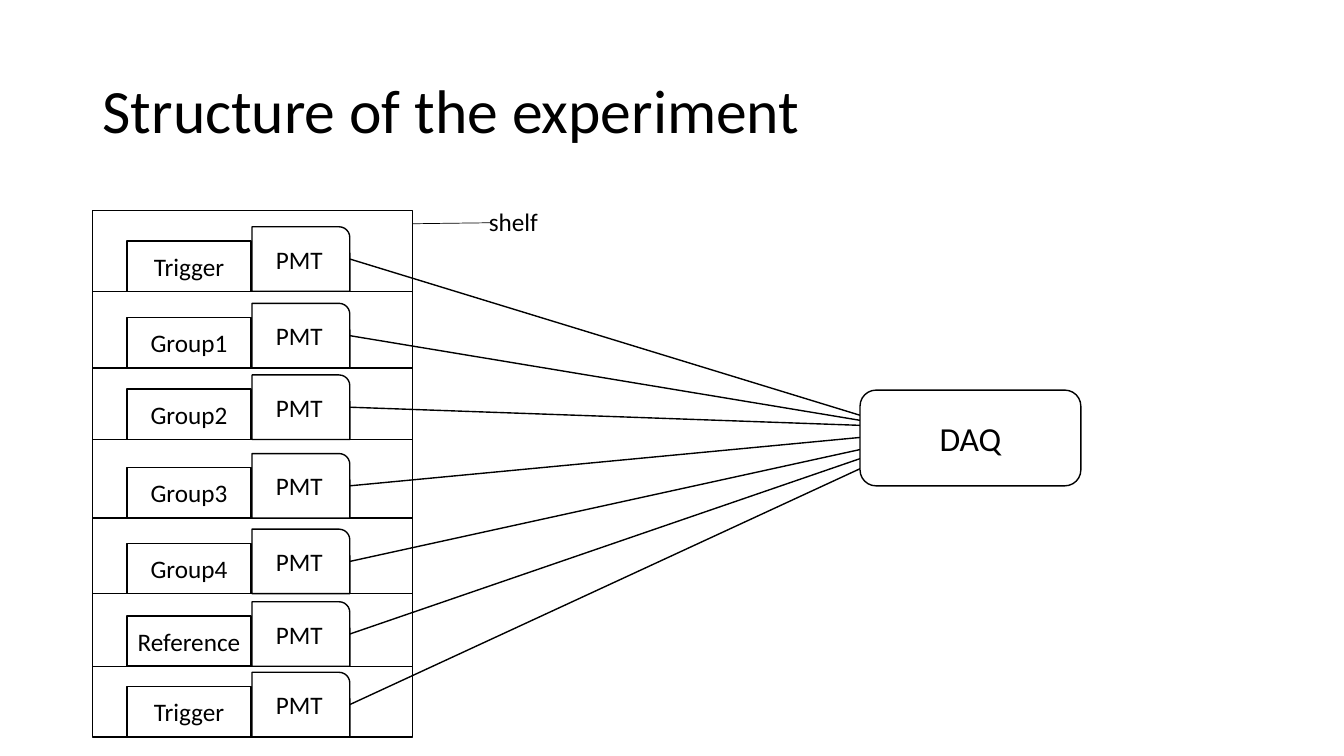
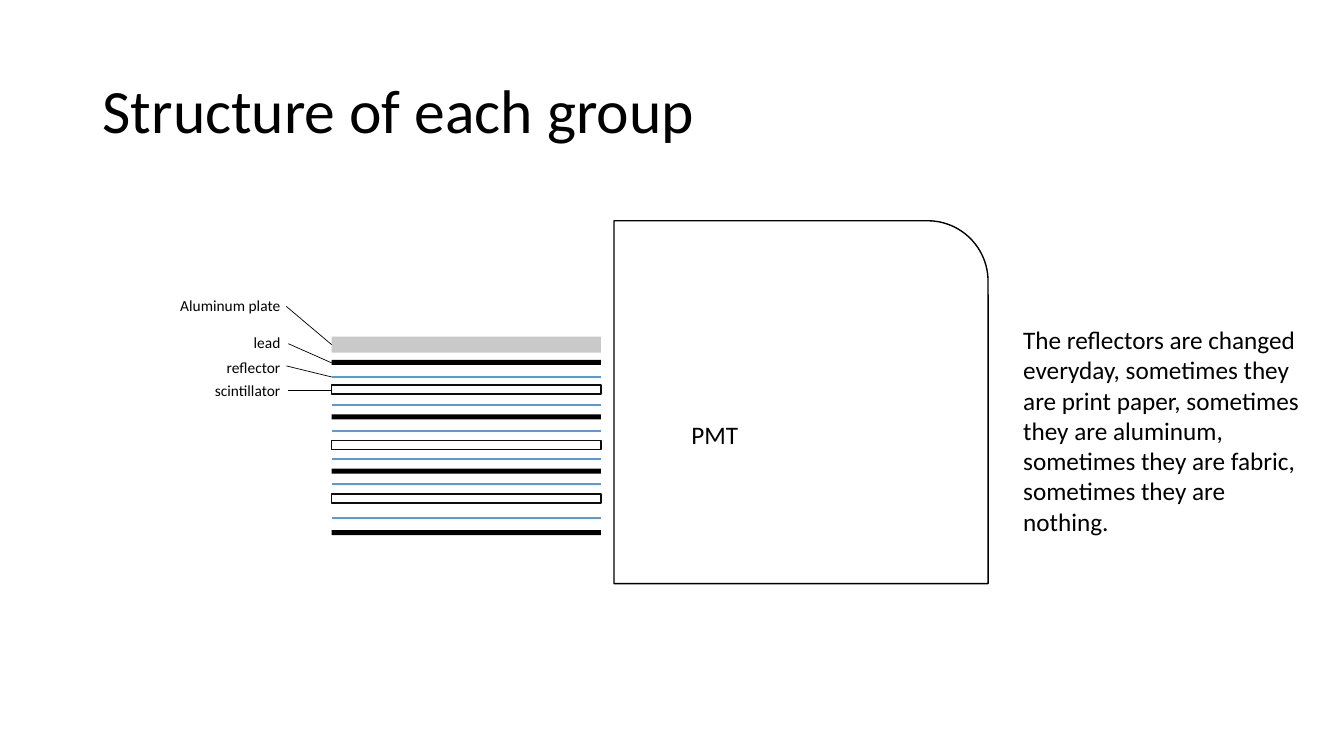
from lxml.etree import SubElement
from pptx import Presentation
from pptx.dml.color import RGBColor
from pptx.enum.shapes import MSO_CONNECTOR, MSO_SHAPE
from pptx.enum.text import MSO_ANCHOR, PP_ALIGN
from pptx.oxml.ns import qn
from pptx.util import Inches, Pt

COLORS = {
    "ink": "000000",
    "paper": "FFFFFF",
    "plate": "C9C9C9",
    "mirror": "5B9BD5",
    "edge": "0D0D0D",
}
FONT = "Calibri"


def tint(name):
    return RGBColor.from_string(COLORS[name])


class Deck:
    def __init__(self):
        self.prs = Presentation()
        self.prs.slide_width = Inches(13.33)
        self.prs.slide_height = Inches(7.5)
        self.slide = None

    def page(self, title):
        self.slide = self.prs.slides.add_slide(self.prs.slide_layouts[6])
        para = self.text(0.92, 0.4, 11.5, 1.45, title, 44, anchor=MSO_ANCHOR.MIDDLE)
        para.line_spacing = 0.9

    def label(self, frame, words, size, align):
        frame.word_wrap = True
        para = frame.paragraphs[0]
        para.text = words
        para.alignment = align
        para.font.name = FONT
        para.font.size = Pt(size)
        para.font.color.rgb = tint("ink")
        return para

    def text(self, x, y, w, h, words, size=18, align=PP_ALIGN.LEFT,
             anchor=MSO_ANCHOR.TOP):
        box = self.slide.shapes.add_textbox(Inches(x), Inches(y), Inches(w), Inches(h))
        box.text_frame.vertical_anchor = anchor
        return self.label(box.text_frame, words, size, align)

    def shape(self, x, y, w, h, words="", size=18, kind=MSO_SHAPE.RECTANGLE,
              fill="paper", edge="ink"):
        box = self.slide.shapes.add_shape(
            kind, Inches(x), Inches(y), Inches(w), Inches(h))
        box.shadow.inherit = False
        box.fill.solid()
        box.fill.fore_color.rgb = tint(fill)
        if edge:
            box.line.color.rgb = tint(edge)
            box.line.width = Pt(1)
        else:
            box.line.fill.background()
        if words:
            frame = box.text_frame
            frame.margin_left = frame.margin_right = Inches(0.05)
            frame.vertical_anchor = MSO_ANCHOR.MIDDLE
            self.label(frame, words, size, PP_ALIGN.CENTER)

    def line(self, x1, y1, x2, y2, width=1, color="ink"):
        link = self.slide.shapes.add_connector(
            MSO_CONNECTOR.STRAIGHT, Inches(x1), Inches(y1), Inches(x2), Inches(y2))
        link.line.color.rgb = tint(color)
        link.line.width = Pt(width)
        SubElement(link._element.spPr, qn("a:effectLst"))


def setup(deck):
    deck.page("Structure of the experiment")
    left, top, wide = 0.92, 2.09, 3.17
    right = left + wide
    rows = [
        ("Trigger", 2.89, 4.12),
        ("Group1", 3.65, 4.17),
        ("Group2", 4.36, 4.22),
        ("Group3", 5.14, 4.34),
        ("Group4", 5.89, 4.46),
        ("Reference", 6.61, 4.55),
        ("Trigger", 7.31, 4.65),
    ]
    tube_x, tube_w, tube_h = 2.5, 0.97, 0.64
    daq_x = 8.53
    deck.shape(left, top, wide, rows[-1][1] - top)
    for name, base, port in rows:
        if base < rows[-1][1]:
            deck.line(left, base, right, base)
        deck.shape(1.26, base - 0.5, 1.23, 0.5, name)
        deck.shape(tube_x, base - tube_h, tube_w, tube_h, "PMT",
                   kind=MSO_SHAPE.ROUND_1_RECTANGLE)
        deck.line(tube_x + tube_w, base - tube_h / 2, daq_x, port)
    deck.shape(daq_x, 3.87, 2.19, 0.95, "DAQ", 24, MSO_SHAPE.ROUNDED_RECTANGLE)
    deck.line(right, 2.22, 4.86, 2.21, 0.5)
    deck.text(4.75, 2, 1.14, 0.4, "shelf")


def group(deck):
    deck.page("Structure of each group")
    left, wide = 3.29, 2.67
    deck.shape(left, 3.34, wide, 0.16, fill="plate", edge=None)
    for y in (3.57, 4.11, 4.65, 5.26):
        deck.shape(left, y, wide, 0.05, fill="ink", edge=None)
    for y in (3.74, 4.02, 4.28, 4.55, 4.8, 5.14):
        deck.line(left, y, left + wide, y, 1.5, "mirror")
    for y in (3.82, 4.37, 4.9):
        deck.shape(left, y, wide, 0.09, edge="edge")
    deck.shape(6.09, 2.19, 3.71, 3.6, kind=MSO_SHAPE.ROUND_1_RECTANGLE)
    deck.text(6.76, 4.11, 2.43, 0.4, "PMT")
    labels = [
        ("Aluminum plate", 2.89, 2.84, 3.04, 3.42),
        ("lead", 3.26, 2.86, 3.41, 3.6),
        ("reflector", 3.5, 2.84, 3.63, 3.74),
        ("scintillator", 3.73, 2.86, 3.87, 3.87),
    ]
    for name, top, x, y, end in labels:
        deck.line(left, end, x, y, 0.5)
        deck.text(1.58, top, 1.3, 0.29, name, 11, PP_ALIGN.RIGHT)
    deck.text(10.05, 3.17, 3.06, 2.22,
              "The reflectors are changed everyday, sometimes they are print "
              "paper, sometimes they are aluminum, sometimes they are fabric, "
              "sometimes they are nothing.")


def main():
    deck = Deck()
    setup(deck)
    group(deck)
    deck.prs.save("out.pptx")


if __name__ == "__main__":
    main()
